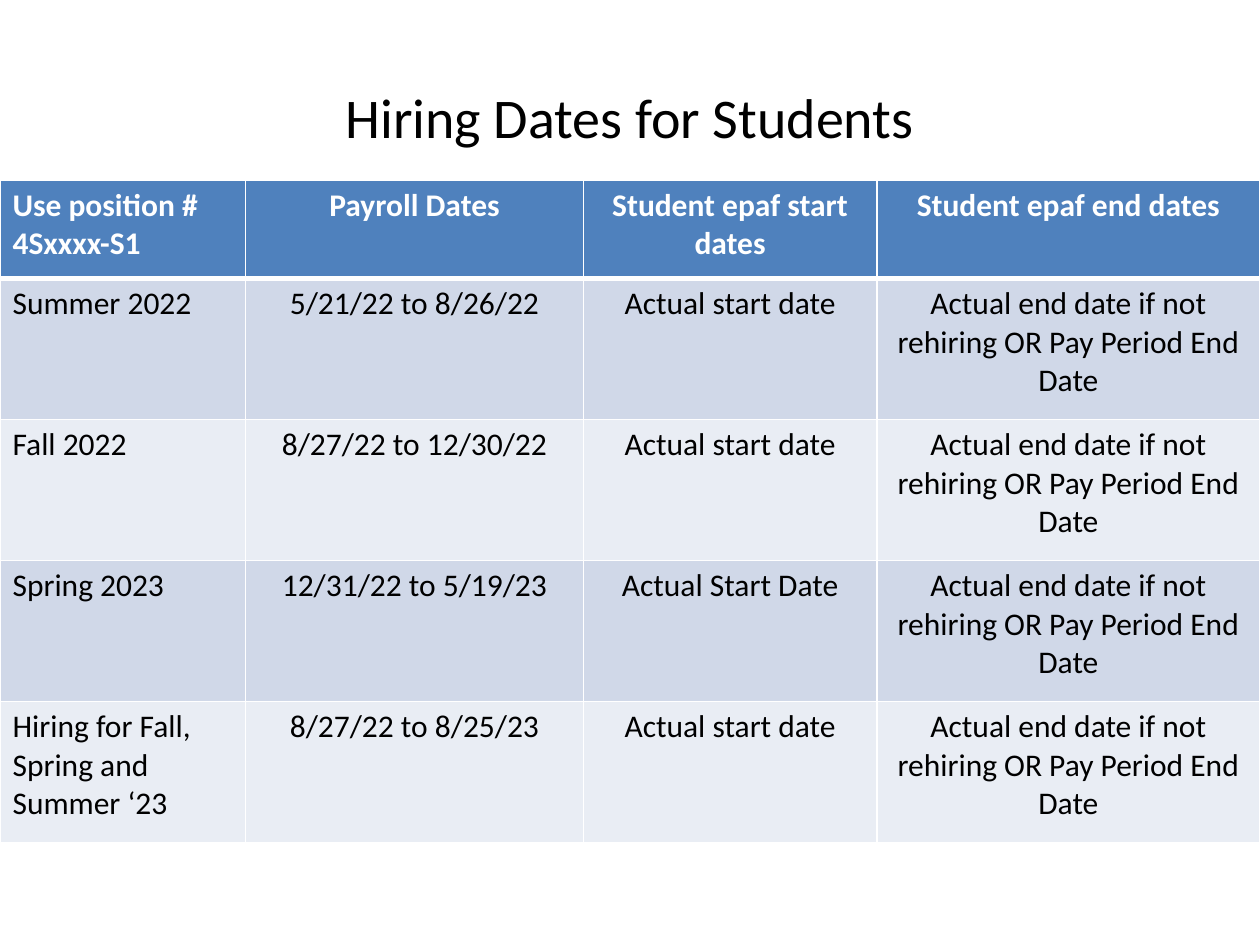
from lxml.etree import SubElement
from pptx import Presentation
from pptx.dml.color import RGBColor
from pptx.enum.text import MSO_ANCHOR, PP_ALIGN
from pptx.oxml.ns import qn
from pptx.util import Inches, Pt

COLORS = {"text": "000000", "white": "FFFFFF", "header": "4F81BD",
          "band": "D0D8E8", "plain": "E9EDF4"}
FORMATS = {
    "title": {"name": "Calibri", "size": Pt(32), "bold": False},
    "header": {"name": "Calibri", "size": Pt(18), "bold": True},
    "body": {"name": "Calibri", "size": Pt(18), "bold": False},
}
COLUMNS = [1.95, 2.68, 2.33, 3.04]
HEADER_H, ROW_H = 0.78, 1.12
END_RULE = "Actual end date if not rehiring OR Pay Period End Date"
HEADINGS = ["Use position # 4Sxxxx-S1", "Payroll Dates",
            "Student epaf start dates", "Student epaf end dates"]
TERMS = [
    ("Summer 2022", "5/21/22 to 8/26/22", "Actual start date"),
    ("Fall 2022", "8/27/22 to 12/30/22", "Actual start date"),
    ("Spring 2023", "12/31/22 to 5/19/23", "Actual Start Date"),
    ("Hiring for Fall, Spring and Summer ‘23", "8/27/22 to 8/25/23", "Actual start date"),
]


def write(tf, text, style, color, align):
    """Put one formatted paragraph in a text frame."""
    tf.word_wrap = True
    p = tf.paragraphs[0]
    p.alignment = align
    r = p.add_run()
    r.text = text
    for key, value in FORMATS[style].items():
        setattr(r.font, key, value)
    r.font.color.rgb = RGBColor.from_string(COLORS[color])


def add_borders(cell, bottom):
    """Draw white cell borders, with the bottom one of the given width."""
    tcPr = cell._tc.get_or_add_tcPr()
    for side, width in {"L": 1, "R": 1, "T": 1, "B": bottom}.items():
        ln = SubElement(tcPr, qn(f"a:ln{side}"), w=str(Pt(width)))
        fill = SubElement(ln, qn("a:solidFill"))
        SubElement(fill, qn("a:srgbClr"), val=COLORS["white"])


def add_title(s, box, text):
    """Place the centred slide title in its box."""
    tf = s.shapes.add_textbox(*box).text_frame
    tf.vertical_anchor = MSO_ANCHOR.MIDDLE
    write(tf, text, "title", "text", PP_ALIGN.CENTER)


def add_dates_table(s, box, rows):
    """Place the table of hiring dates in its box."""
    table = s.shapes.add_table(len(rows), len(COLUMNS), *box).table
    for column, width in zip(table.columns, COLUMNS):
        column.width = Inches(width)
    for i, row in enumerate(rows):
        head = i == 0
        table.rows[i].height = Inches(HEADER_H if head else ROW_H)
        fill = "header" if head else ("plain", "band")[i % 2]
        for j, text in enumerate(row):
            cell = table.cell(i, j)
            add_borders(cell, 3 if head else 1)
            cell.fill.solid()
            cell.fill.fore_color.rgb = RGBColor.from_string(COLORS[fill])
            write(cell.text_frame, text, "header" if head else "body",
                  "white" if head else "text",
                  PP_ALIGN.CENTER if j else PP_ALIGN.LEFT)


def main():
    """Build the slide and save it."""
    prs = Presentation()
    prs.slide_width, prs.slide_height = Inches(10), Inches(7.5)
    s = prs.slides.add_slide(prs.slide_layouts[6])
    w, h = prs.slide_width, prs.slide_height
    add_title(s, (int(w * 0.05), int(h * 0.04), int(w * 0.9), Inches(1.25)),
              "Hiring Dates for Students")
    rows = [HEADINGS] + [[*term, END_RULE] for term in TERMS]
    height = Inches(HEADER_H + ROW_H * len(TERMS))
    add_dates_table(s, (0, Inches(1.43), w, height), rows)
    prs.save("out.pptx")


if __name__ == "__main__":
    main()
